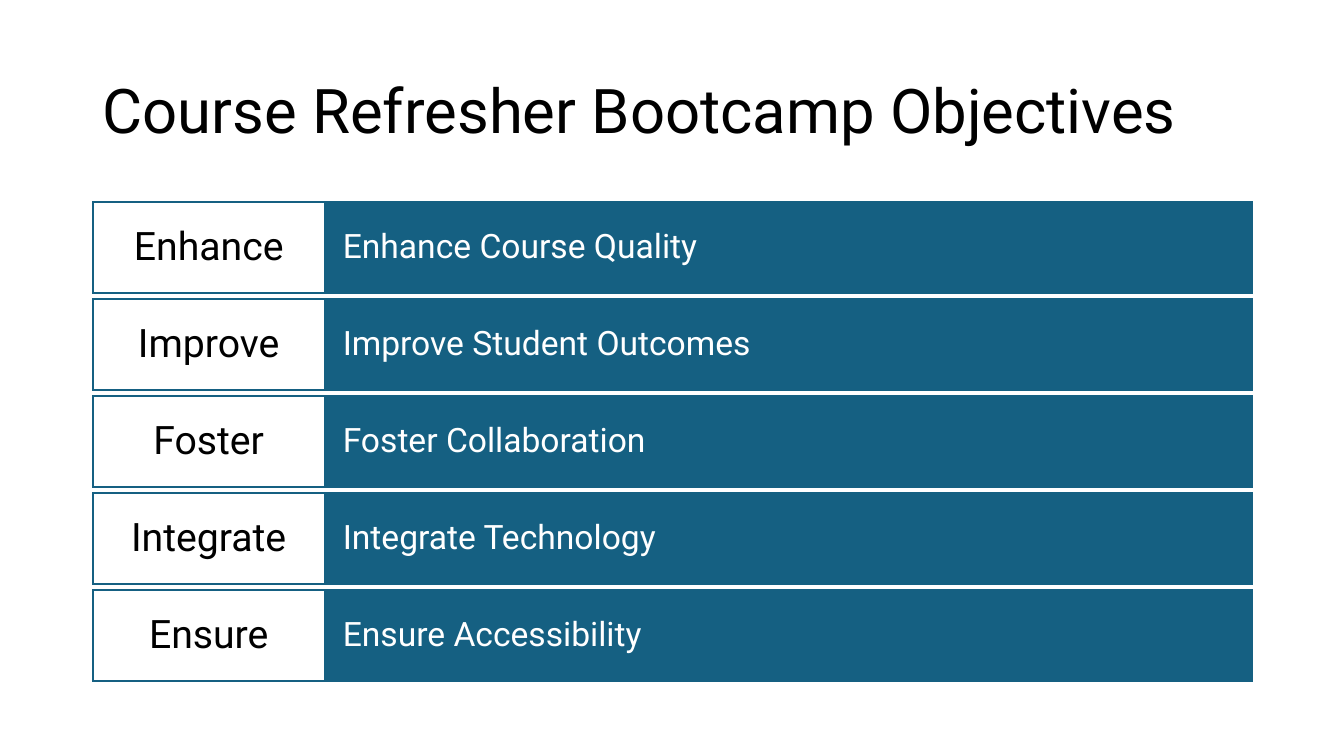
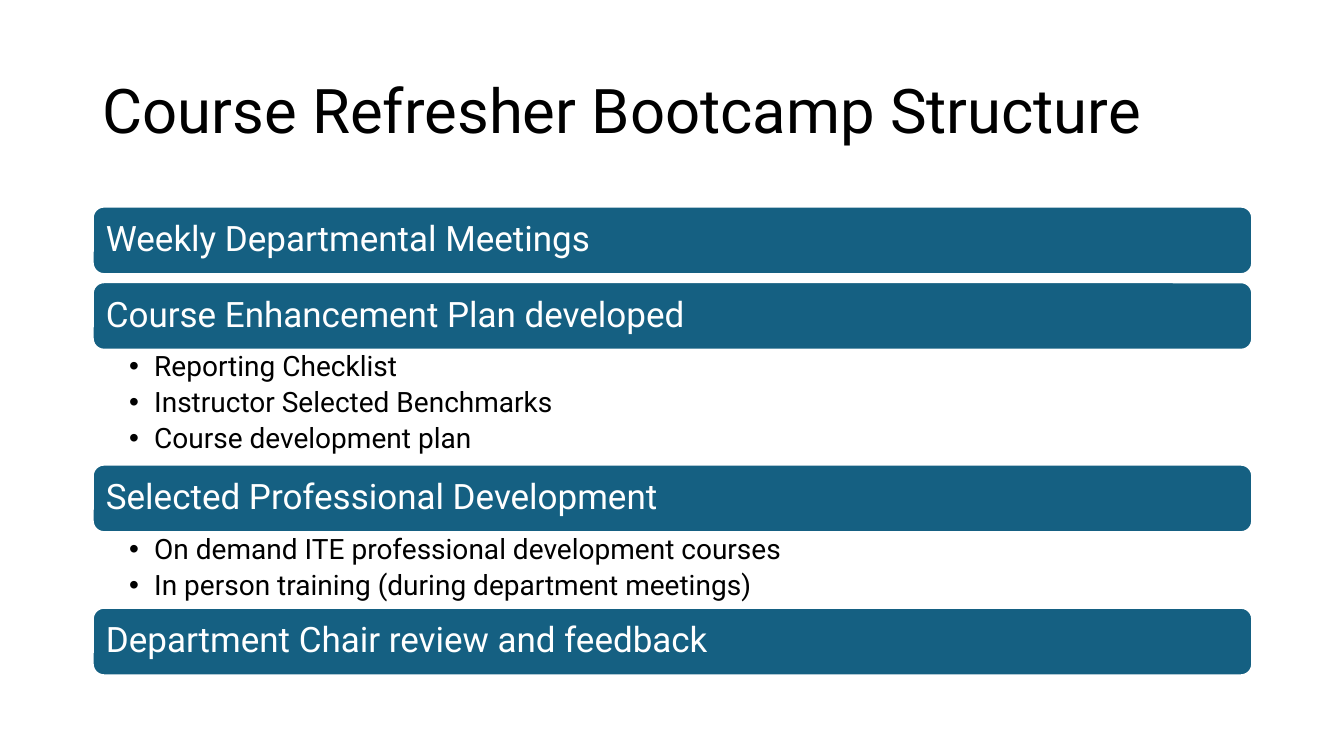
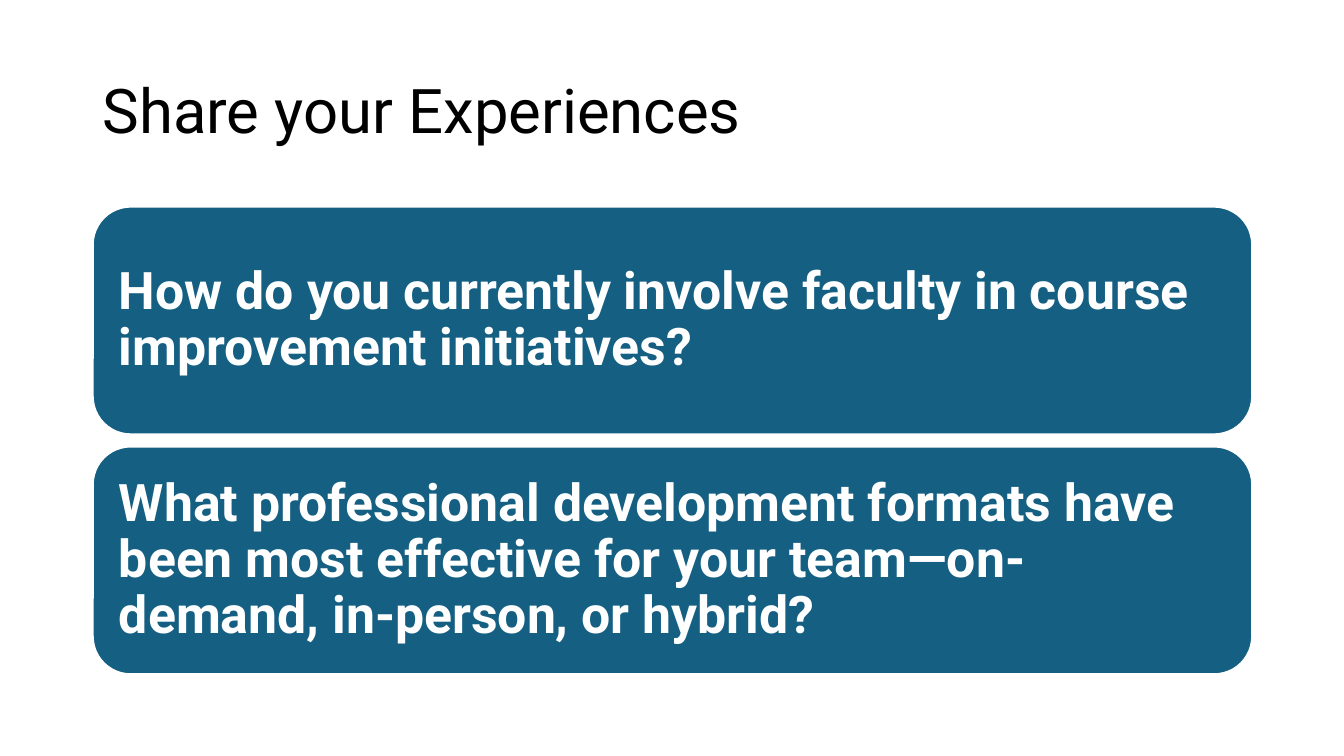
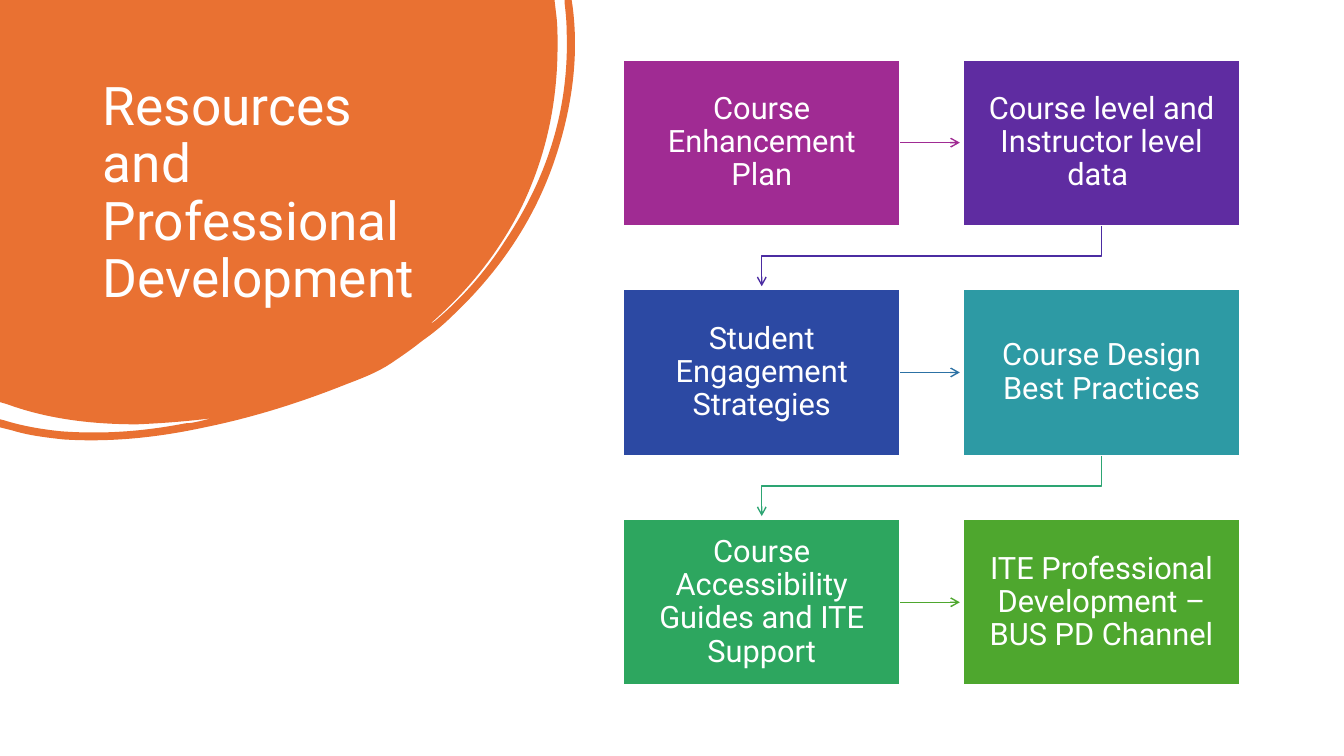
from pptx import Presentation
from pptx.dml.color import RGBColor
from pptx.enum.shapes import MSO_CONNECTOR, MSO_SHAPE
from pptx.enum.text import MSO_ANCHOR, PP_ALIGN
from pptx.oxml.ns import qn
from pptx.util import Inches, Pt
from lxml import etree

RECT, ROUNDED = MSO_SHAPE.RECTANGLE, MSO_SHAPE.ROUNDED_RECTANGLE
STRAIGHT, ELBOW = MSO_CONNECTOR.STRAIGHT, MSO_CONNECTOR.ELBOW
TOP, MIDDLE = MSO_ANCHOR.TOP, MSO_ANCHOR.MIDDLE
LEFT, CENTER = PP_ALIGN.LEFT, PP_ALIGN.CENTER

FONT = "Roboto"
BLACK, WHITE, BLUE, ORANGE = "000000", "FFFFFF", "156082", "E97132"
MARGIN, CONTENT_WIDTH = 0.92, 11.5
TITLE_AREA = (MARGIN, 0.4, CONTENT_WIDTH, 1.45)


def color(hex_value):
    return RGBColor.from_string(hex_value)


def add_box(page, area, lines, size, ink, shape=None, fill=None, edge=WHITE,
            insets=(0.1, 0.05), anchor=MIDDLE, align=LEFT, bold=False):
    """Add a text box, or a filled shape with text, at area in inches."""
    place = [Inches(value) for value in area]
    if shape is None:
        box = page.shapes.add_textbox(*place)
    else:
        box = page.shapes.add_shape(shape, *place)
        box.shadow.inherit = False
        box.fill.solid()
        box.fill.fore_color.rgb = color(fill)
        box.line.color.rgb = color(edge)
        box.line.width = Pt(1.5)
        # Square corners on the outline
        stroke = box._element.spPr.find(qn("a:ln"))
        etree.SubElement(stroke, qn("a:miter")).set("lim", "800000")
    frame = box.text_frame
    across, down = Inches(insets[0]), Inches(insets[1])
    settings = {"word_wrap": True, "vertical_anchor": anchor,
                "margin_left": across, "margin_right": across,
                "margin_top": down, "margin_bottom": down}
    for name, value in settings.items():
        setattr(frame, name, value)
    for index, line in enumerate(lines):
        para = frame.add_paragraph() if index else frame.paragraphs[0]
        para.alignment, para.line_spacing = align, 0.9
        span = para.add_run()
        span.text = line
        for name, value in {"name": FONT, "size": Pt(size), "bold": bold}.items():
            setattr(span.font, name, value)
        span.font.color.rgb = color(ink)
    return box


deck = Presentation()
deck.slide_width, deck.slide_height = Inches(13.33), Inches(7.5)
objectives, structure, experiences, resources = [
    deck.slides.add_slide(deck.slide_layouts[6]) for _ in range(4)]

# Shared titles
for page, title in ((objectives, "Course Refresher Bootcamp Objectives"),
                    (structure, "Course Refresher Bootcamp Structure"),
                    (experiences, "Share your Experiences")):
    add_box(page, TITLE_AREA, [title], 44, BLACK)

# Objectives: a label and a band in each row
LABEL_WIDTH = 2.3
FIRST_ROW, LAST_ROW = 2, 5.85
goals = ["Enhance Course Quality", "Improve Student Outcomes",
         "Foster Collaboration", "Integrate Technology", "Ensure Accessibility"]
for row, goal in enumerate(goals):
    top = FIRST_ROW + row * (LAST_ROW - FIRST_ROW) / (len(goals) - 1)
    add_box(objectives, (MARGIN + LABEL_WIDTH, top, CONTENT_WIDTH - LABEL_WIDTH, 0.91),
            [goal], 24, WHITE, RECT, BLUE, BLUE, (0.18, 0.23))
    add_box(objectives, (MARGIN, top, LABEL_WIDTH, 0.91),
            [goal.split()[0]], 28, BLACK, RECT, WHITE, BLUE, (0.12, 0.09), align=CENTER)

# Structure: heading bars, each followed by bullets or a gap
BAR_HEIGHT = 0.67
sections = [
    ("Weekly Departmental Meetings", [], 0.08),
    ("Course Enhancement Plan developed",
     ["Reporting Checklist", "Instructor Selected Benchmarks",
      "Course development plan"], 1.14),
    ("Selected Professional Development",
     ["On demand ITE professional development courses",
      "In person training (during department meetings)"], 0.75),
    ("Department Chair review and feedback", [], 0),
]
top = 2.05
for heading, bullets, space in sections:
    add_box(structure, (MARGIN, top, CONTENT_WIDTH, BAR_HEIGHT), [heading], 25, WHITE,
            ROUNDED, BLUE, insets=(0.1, 0.1))
    top += BAR_HEIGHT
    if bullets:
        box = add_box(structure, (MARGIN, top, CONTENT_WIDTH, space), bullets, 20, BLACK,
                      insets=(0.36, 0.03), anchor=TOP)
        for para in box.text_frame.paragraphs:
            para.space_after = Pt(4)
            props = para._p.get_or_add_pPr()
            props.set("marL", str(Inches(0.25)))
            props.set("indent", str(-Inches(0.25)))
            etree.SubElement(props, qn("a:buFont")).set("typeface", "Arial")
            etree.SubElement(props, qn("a:buChar")).set("char", "•")
    top += space

# Experiences: two question cards
questions = [
    "How do you currently involve faculty in course improvement initiatives?",
    "What professional development formats have been most effective for your "
    "team—on-demand, in-person, or hybrid?",
]
for row, question in enumerate(questions):
    add_box(experiences, (MARGIN, 2.05 + row * 2.38, CONTENT_WIDTH, 2.26), [question],
            37, WHITE, ROUNDED, BLUE, insets=(0.15, 0.15), bold=True)

# Resources: corner blob in hundredths of an inch,
# each step a line (2 numbers) or a Bezier curve (6)
blob_steps = [
    (550, 0), (552, 17), (553, 26, 553, 36, 553, 45),
    (553, 101, 542, 154, 518, 204), (496, 249, 465, 288, 427, 321),
    (429, 321, 430, 319, 432, 318), (459, 295, 482, 269, 501, 239),
    (543, 176, 565, 107, 562, 30), (562, 21, 561, 12, 560, 3),
    (560, 0), (567, 0), (568, 7), (574, 54, 568, 102, 553, 150),
    (533, 214, 497, 268, 448, 314), (439, 323, 429, 331, 419, 338),
    (409, 346, 399, 353, 387, 361), (375, 369, 360, 375, 344, 381),
    (299, 399, 252, 414, 203, 424), (157, 434, 110, 439, 63, 436),
    (45, 434, 28, 432, 12, 427), (0, 424), (0, 416), (4, 417),
    (23, 423, 42, 426, 61, 428), (103, 431, 143, 428, 184, 420),
    (189, 420, 193, 419, 198, 418), (202, 417, 206, 416, 210, 415),
    (186, 418, 161, 420, 136, 421), (92, 421, 48, 416, 7, 401),
    (0, 399),
]
outline = resources.shapes.build_freeform(0, 0, scale=Inches(0.01))
outline.add_line_segments([step[-2:] for step in blob_steps], close=True)
blob = outline.convert_to_shape()
blob.shadow.inherit = False
blob.fill.solid()
blob.fill.fore_color.rgb = color(ORANGE)
blob.line.fill.background()
# Bend the straight segments that have control points
for segment, step in zip(list(blob._element.iter(qn("a:lnTo"))), blob_steps):
    if len(step) == 6:
        segment.tag = qn("a:cubicBezTo")
        for position in (0, 1):
            control = etree.Element(qn("a:pt"))
            control.set("x", str(step[2 * position]))
            control.set("y", str(step[2 * position + 1]))
            segment.insert(position, control)
add_box(resources, (MARGIN, 0.74, 3.52, 2.22), ["Resources and Professional Development"],
        38, WHITE, anchor=TOP)

# Resources: cards in two columns, each with an arrow to the next
CARD_WIDTH, CARD_HEIGHT = 2.75, 1.65
COLUMN_STEP, ROW_STEP = 3.37, 2.28
DROP = 0.6
cards = [
    ("Course Enhancement Plan", "A02B93", "A02B93"),
    ("Course level and Instructor level data ", "5F2CA1", "4B2CA2"),
    ("Student Engagement Strategies", "2C49A3", "2C71A4"),
    ("Course Design Best Practices", "2D9AA4", "2DA573"),
    ("Course Accessibility Guides and ITE Support", "2DA65F", "4EA72E"),
    ("ITE Professional Development – BUS PD Channel", "4EA72E", None),
]
for index, (label, fill, arrow_color) in enumerate(cards):
    row, column = divmod(index, 2)
    left, top = 6.18 + column * COLUMN_STEP, 0.59 + row * ROW_STEP
    add_box(resources, (left, top, CARD_WIDTH, CARD_HEIGHT), [label], 22, WHITE,
            RECT, fill, insets=(0.13, 0.14), align=CENTER)
    if arrow_color is None:
        continue
    if column == 0:
        middle = top + CARD_HEIGHT / 2
        kind = STRAIGHT
        ends = (left + CARD_WIDTH, middle, left + COLUMN_STEP - 0.03, middle)
    else:
        # The elbow is laid out sideways and turned a quarter about its centre
        center_x = left + (CARD_WIDTH - COLUMN_STEP) / 2
        center_y = top + CARD_HEIGHT + DROP / 2
        kind = ELBOW
        ends = (center_x - DROP / 2, center_y - COLUMN_STEP / 2,
                center_x + DROP / 2, center_y + COLUMN_STEP / 2)
    arrow = resources.shapes.add_connector(kind, *[Inches(value) for value in ends])
    arrow.line.color.rgb = color(arrow_color)
    arrow.line.width = Pt(1)
    props = arrow._element.spPr
    if kind == ELBOW:
        props.find(qn("a:xfrm")).set("rot", "5400000")
    etree.SubElement(props.find(qn("a:ln")), qn("a:tailEnd")).set("type", "arrow")
    etree.SubElement(props, qn("a:effectLst"))

deck.save("out.pptx")
